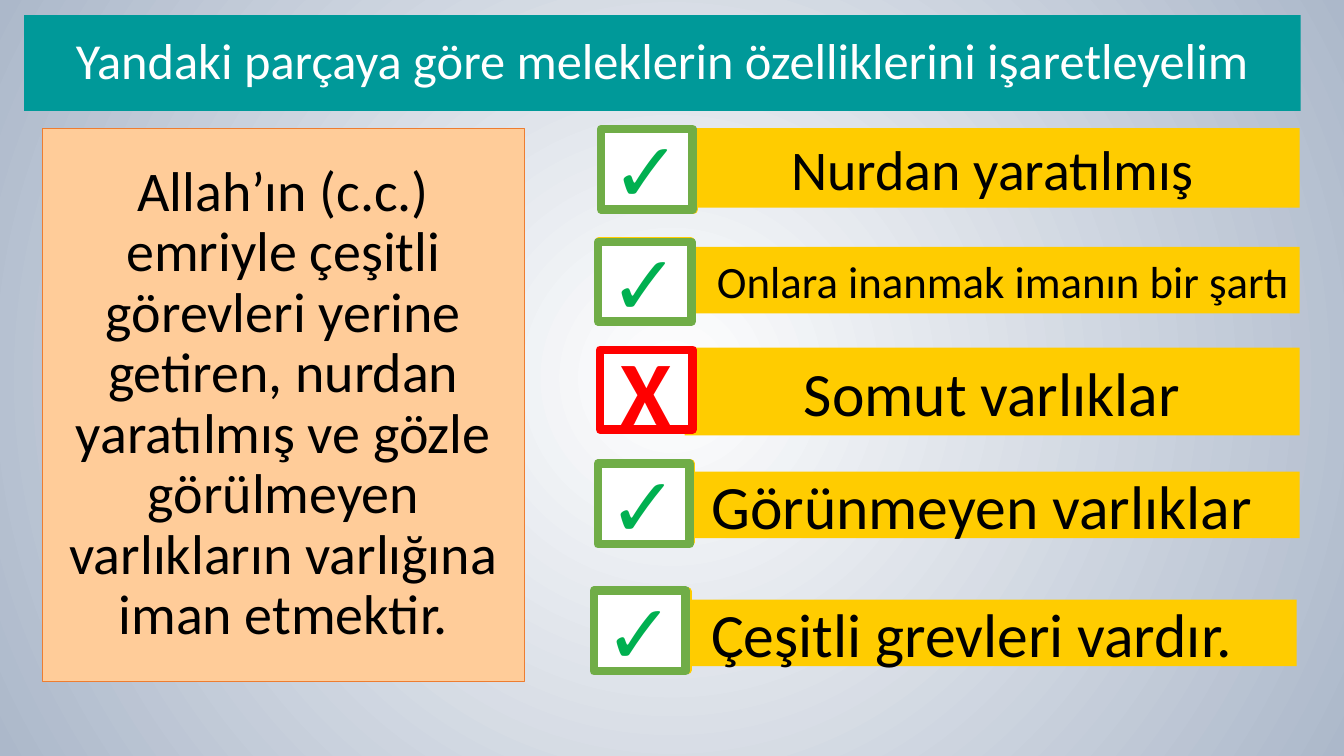
from dataclasses import dataclass

from lxml import etree
from pptx import Presentation
from pptx.dml.color import RGBColor
from pptx.enum.shapes import MSO_SHAPE
from pptx.enum.text import MSO_ANCHOR, MSO_AUTO_SIZE, PP_ALIGN
from pptx.oxml.ns import qn
from pptx.util import Inches, Pt

RECT = MSO_SHAPE.RECTANGLE
MIDDLE = MSO_ANCHOR.MIDDLE
NO_FIT = MSO_AUTO_SIZE.NONE
CENTER, RIGHT = PP_ALIGN.CENTER, PP_ALIGN.RIGHT


@dataclass(frozen=True)
class Theme:
    font: str = "Calibri"
    black: str = "000000"
    white: str = "FFFFFF"
    edge: str = "ACB8CA"
    teal: str = "009999"
    peach: str = "FFCC99"
    orange: str = "ED7D31"
    yellow: str = "FFCC00"
    frame: str = "70AD47"
    green: str = "00B050"
    red: str = "FF0000"
    title: int = 36
    body: int = 40
    tick: int = 60
    cross: int = 66
    thin: float = 0.75
    thick: float = 6


THEME = Theme()

TITLE = "Yandaki parçaya göre meleklerin özelliklerini işaretleyelim"
PASSAGE = ("Allah’ın (c.c.) emriyle çeşitli görevleri yerine getiren, nurdan "
           "yaratılmış ve gözle görülmeyen varlıkların varlığına iman etmektir.")

# Text, size, alignment, is true, bar place, backing place, mark place
TRAITS = [
    ("Nurdan yaratılmış", 40, CENTER, True,
     (6.79, 1.27, 6.1, 0.79), (5.97, 1.3, 0.91, 0.78), (5.96, 1.28, 0.91, 0.8)),
    ("Onlara inanmak imanın bir şartı", 32, RIGHT, True,
     (6.42, 2.45, 6.47, 0.66), (5.94, 2.39, 0.91, 0.78), (5.93, 2.4, 0.93, 0.79)),
    ("Somut varlıklar", 44, CENTER, False,
     (6.79, 3.45, 6.1, 0.87), (5.97, 3.48, 0.91, 0.78), (5.95, 3.47, 0.92, 0.79)),
    (" Görünmeyen varlıklar", 44, CENTER, True,
     (6.45, 4.68, 6.44, 0.66), (5.94, 4.6, 0.91, 0.78), (5.93, 4.6, 0.91, 0.8)),
    ("Çeşitli grevleri vardır.", 44, CENTER, True,
     (6.42, 5.95, 6.44, 0.66), (5.91, 5.87, 0.91, 0.78), (5.89, 5.86, 0.91, 0.8)),
]


def assign(target, values):
    for name, value in values.items():
        setattr(target, name, value)


def paint(shape, fill, line=None, width=0):
    shape.fill.solid()
    shape.fill.fore_color.rgb = RGBColor.from_string(fill)
    if line:
        shape.line.color.rgb = RGBColor.from_string(line)
        shape.line.width = Pt(width)
    else:
        shape.line.fill.background()


def write(shape, text, size, color, align=CENTER, bold=False,
          space=1.0, inset=(0.1, 0.05)):
    side, end = (Inches(gap) for gap in inset)
    frame = shape.text_frame
    assign(frame, {
        "word_wrap": True, "auto_size": NO_FIT, "vertical_anchor": MIDDLE,
        "margin_left": side, "margin_right": side,
        "margin_top": end, "margin_bottom": end,
    })
    para = frame.paragraphs[0]
    assign(para, {"alignment": align, "line_spacing": space})
    run = para.add_run()
    run.text = text
    assign(run.font, {"name": THEME.font, "size": Pt(size), "bold": bold})
    run.font.color.rgb = RGBColor.from_string(color)


def add_box(slide, place, fill, line=None, width=0):
    box = slide.shapes.add_shape(RECT, *map(Inches, place))
    box.shadow.inherit = False
    paint(box, fill, line, width)
    return box


def add_mark(slide, place, right):
    if right:
        sign, size, color, line = "✓", THEME.tick, THEME.green, THEME.frame
    else:
        sign, size, color, line = "X", THEME.cross, THEME.red, THEME.red
    box = add_box(slide, place, THEME.white, line, THEME.thick)
    write(box, sign, size, color, bold=True)


def add_trait(slide, text, size, align, right, bar, back, mark):
    write(add_box(slide, bar, THEME.yellow), text, size, THEME.black, align)
    add_box(slide, back, THEME.white, THEME.yellow, THEME.thick)
    add_mark(slide, mark, right)


def set_ground(slide):
    fill = slide.background.fill
    fill.gradient()
    for stop, color in zip(fill.gradient_stops, (THEME.white, THEME.edge)):
        stop.color.rgb = RGBColor.from_string(color)
    fill.gradient_stops[0].position = 0
    fill.gradient_stops[1].position = 1
    # Swap the linear direction for a circle around the centre
    grad = slide.element.find(".//" + qn("a:gradFill"))
    line = grad.find(qn("a:lin"))
    ring = etree.Element(qn("a:path"), {"path": "circle"})
    sides = dict.fromkeys("ltrb", "50000")
    etree.SubElement(ring, qn("a:fillToRect"), sides)
    grad.replace(line, ring)


def set_title(slide):
    title = slide.shapes.title
    place = map(Inches, (0.24, 0.15, 12.66, 0.95))
    assign(title, dict(zip(("left", "top", "width", "height"), place)))
    paint(title, THEME.teal)
    write(title, TITLE, THEME.title, THEME.white, space=0.9, inset=(0, 0))


def main():
    deck = Presentation()
    assign(deck, {"slide_width": Inches(13.33), "slide_height": Inches(7.5)})
    slide = deck.slides.add_slide(deck.slide_layouts.get_by_name("Title Only"))
    set_ground(slide)
    set_title(slide)

    # Reading passage
    box = add_box(slide, (0.42, 1.27, 4.78, 5.49), THEME.peach,
                  THEME.orange, THEME.thin)
    write(box, PASSAGE, THEME.body, THEME.black, space=0.9)

    # Marked traits
    for trait in TRAITS:
        add_trait(slide, *trait)

    deck.save("out.pptx")


if __name__ == "__main__":
    main()
